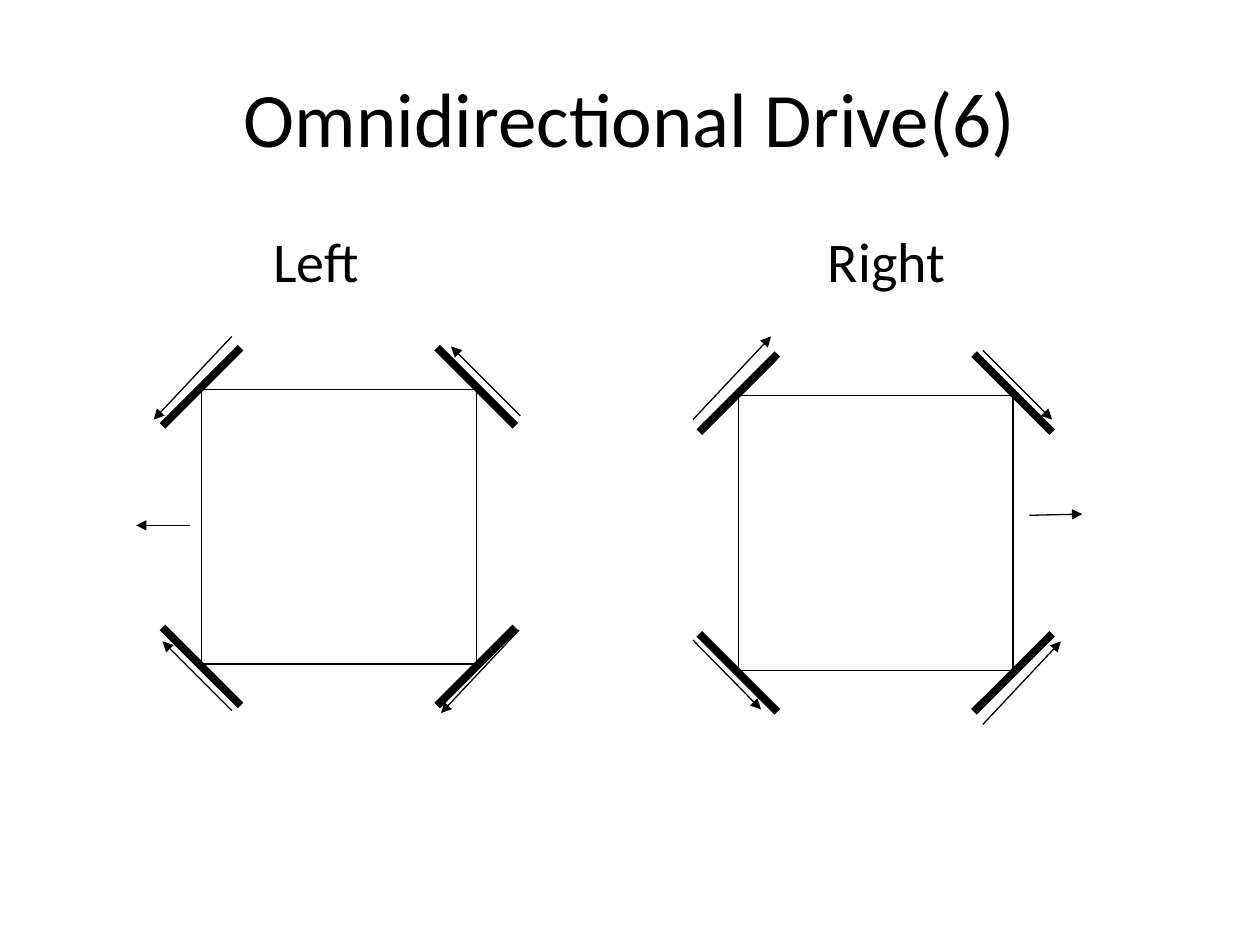
from dataclasses import dataclass
from typing import Any

from lxml.etree import SubElement
from pptx import Presentation
from pptx.dml.color import RGBColor
from pptx.enum.shapes import MSO_CONNECTOR, MSO_SHAPE
from pptx.enum.text import MSO_ANCHOR, PP_ALIGN
from pptx.oxml.ns import qn
from pptx.util import Inches, Pt

COLORS = {"ink": "000000", "paper": "FFFFFF"}
THIN, THICK = 0.75, 4.5
SIDE = 2.18
WHEEL_HALF = 0.31
WHEEL_DROP = 0.02

Point = tuple[float, float]


@dataclass
class Arrow:
    start: Point
    end: Point


@dataclass
class Drive:
    label: str
    label_left: float
    left: float
    top: float
    arrows: list[Arrow]


DRIVES = [
    Drive("Left", 2.07, 1.6, 3.09, [
        Arrow((1.84, 2.67), (1.22, 3.33)),
        Arrow((4.13, 3.3), (3.58, 2.75)),
        Arrow((1.84, 5.64), (1.29, 5.09)),
        Arrow((4.12, 5), (3.5, 5.66)),
        Arrow((1.51, 4.17), (1.08, 4.17)),
    ]),
    Drive("Right", 6.47, 5.86, 3.14, [
        Arrow((5.5, 3.33), (6.12, 2.67)),
        Arrow((7.8, 2.78), (8.35, 3.33)),
        Arrow((5.5, 5.08), (6.04, 5.63)),
        Arrow((7.8, 5.75), (8.42, 5.09)),
        Arrow((8.17, 4.09), (8.59, 4.08)),
    ]),
]


def color(name: str) -> RGBColor:
    return RGBColor.from_string(COLORS[name])


def set_attrs(obj: Any, attrs: dict[str, Any]) -> None:
    for name, value in attrs.items():
        setattr(obj, name, value)


def fill_placeholder(sp: Any, text: str, box: tuple, size: int) -> Any:
    set_attrs(sp, dict(zip(("left", "top", "width", "height"), map(Inches, box))))
    p = sp.text_frame.paragraphs[0]
    r = p.add_run()
    r.text = text
    set_attrs(r.font, {"name": "Calibri", "size": Pt(size)})
    r.font.color.rgb = color("ink")
    return p


def remove_bullet(p: Any) -> None:
    pPr = p._p.get_or_add_pPr()
    pPr.set("marL", "0")
    pPr.set("indent", "0")
    SubElement(pPr, qn("a:buNone"))


def draw_line(s: Any, start: Point, end: Point, width: float, arrow: bool = False) -> None:
    cx = s.shapes.add_connector(MSO_CONNECTOR.STRAIGHT, *map(Inches, start + end))
    cx.line.color.rgb = color("ink")
    cx.line.width = Pt(width)
    if arrow:
        SubElement(cx.line._get_or_add_ln(), qn("a:tailEnd"), type="triangle")
    SubElement(cx._element.spPr, qn("a:effectLst"))


def draw_drive(s: Any, drive: Drive) -> None:
    sp = s.shapes.add_shape(
        MSO_SHAPE.RECTANGLE, *map(Inches, (drive.left, drive.top, SIDE, SIDE)))
    sp.shadow.inherit = False
    sp.fill.solid()
    sp.fill.fore_color.rgb = color("paper")
    sp.line.color.rgb = color("ink")
    sp.line.width = Pt(THIN)
    for col in (0, 1):
        for row in (0, 1):
            x = drive.left + col * SIDE
            y = drive.top + row * SIDE + (WHEEL_DROP if row else -WHEEL_DROP)
            slope = WHEEL_HALF if col != row else -WHEEL_HALF
            draw_line(s, (x - WHEEL_HALF, y - slope), (x + WHEEL_HALF, y + slope), THICK)
    for arrow in drive.arrows:
        draw_line(s, arrow.start, arrow.end, THIN, arrow=True)


def main() -> None:
    prs = Presentation()
    set_attrs(prs, {"slide_width": Inches(10), "slide_height": Inches(7.5)})
    s = prs.slides.add_slide(prs.slide_layouts[3])
    title, *bodies = s.placeholders
    p = fill_placeholder(title, "Omnidirectional Drive(6)", (0.5, 0.3, 9, 1.25), 44)
    p.alignment = PP_ALIGN.CENTER
    title.text_frame.vertical_anchor = MSO_ANCHOR.MIDDLE
    for body, drive in zip(bodies, DRIVES):
        box = (drive.label_left, 1.75, 2.5, 4.95)
        remove_bullet(fill_placeholder(body, drive.label, box, 32))
        draw_drive(s, drive)
    prs.save("out.pptx")


if __name__ == "__main__":
    main()
